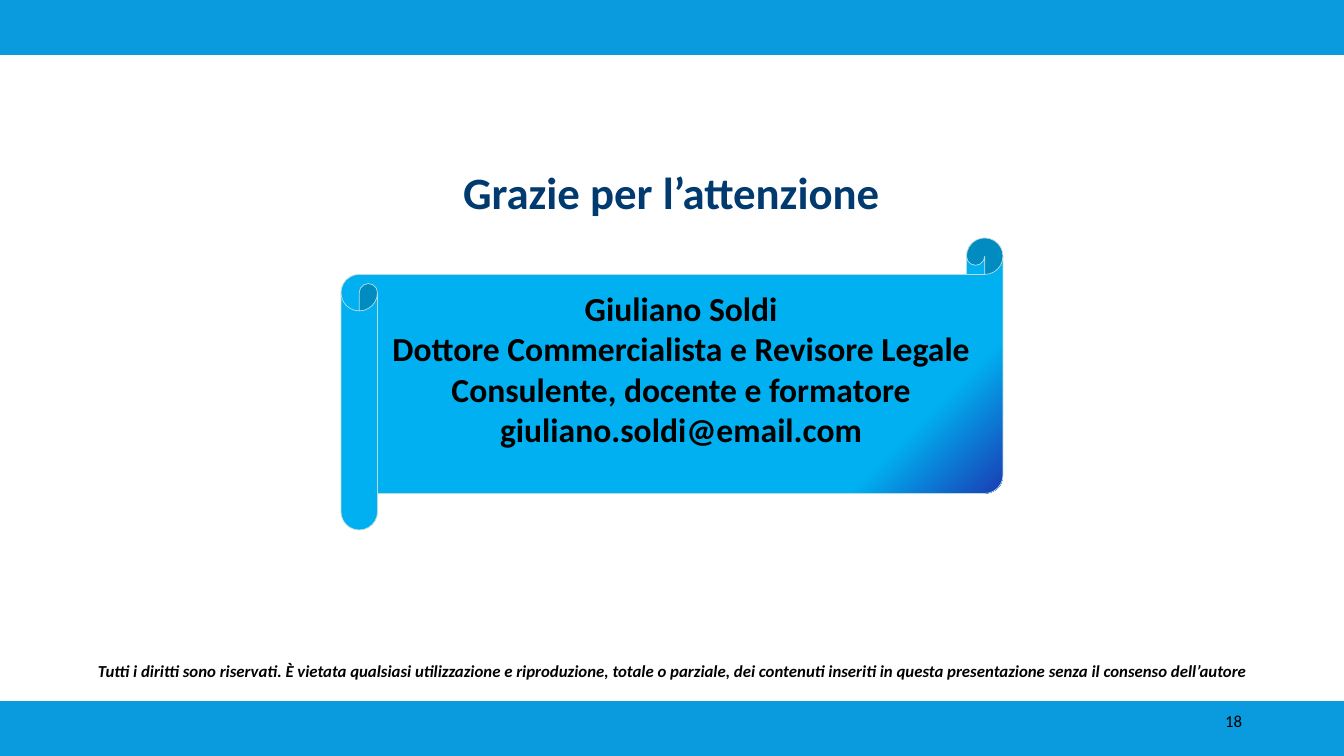
"""Build the closing slide: thanks, a scroll with the speaker's details, and a rights notice."""
import copy
from dataclasses import dataclass

import pptx
import pptx.dml.color
import pptx.enum.shapes
import pptx.enum.text
import pptx.oxml.ns
import pptx.util

EMU_PER_PX = 914400 / 100.8
PAGE_WIDTH, PAGE_HEIGHT = 1344, 756
BAND_HEIGHT = 54
FONT = "Calibri"
BAND_BLUE, SCROLL_BLUE, SCROLL_CORNER, SCROLL_EDGE = "099BDD", "00B0F0", "2020A6", "B6DCDF"
NAVY, BLACK = "003A6F", "000000"
ALIGN = pptx.enum.text.PP_ALIGN
ANCHOR = pptx.enum.text.MSO_ANCHOR
SHAPE = pptx.enum.shapes.MSO_SHAPE


@dataclass(frozen=True)
class Area:
    left: int
    top: int
    width: int
    height: int


@dataclass(frozen=True)
class Label:
    text: str
    area: Area
    size: int
    color: str = BLACK
    bold: bool = True
    italic: bool = False
    align: ALIGN = ALIGN.CENTER
    anchor: ANCHOR = ANCHOR.TOP


BANDS = [Area(0, top, PAGE_WIDTH, BAND_HEIGHT) for top in (0, PAGE_HEIGHT - BAND_HEIGHT)]
SCROLL = Area(341, 238, 662, 292)
CONTACT = "\n".join([
    "Giuliano Soldi",
    "Dottore Commercialista e Revisore Legale",
    "Consulente, docente e formatore",
    "giuliano.soldi@email.com",
])
LABELS = [
    Label("Grazie per l’attenzione", Area(180, 160, 983, 65), 32, color=NAVY),
    Label("Tutti i diritti sono riservati. È vietata qualsiasi utilizzazione e riproduzione, "
          "totale o parziale, dei contenuti inseriti in questa presentazione senza il consenso "
          "dell’autore", Area(72, 656, 1202, 30), 12, italic=True),
    Label("18", Area(950, 701, 302, 40), 12, bold=False, align=ALIGN.RIGHT, anchor=ANCHOR.MIDDLE),
]


def px(length: int) -> pptx.util.Emu:
    """Turn slide pixels into EMU."""
    return pptx.util.Emu(round(length * EMU_PER_PX))


def place(area: Area) -> tuple:
    """Give the left, top, width and height of an area in EMU."""
    return px(area.left), px(area.top), px(area.width), px(area.height)


def rgb(color: str) -> pptx.dml.color.RGBColor:
    """Turn a hex string into a colour."""
    return pptx.dml.color.RGBColor.from_string(color)


def write(frame, text: str, *, size: int, color: str = BLACK, bold: bool = True,
          italic: bool = False, align=ALIGN.CENTER, anchor=ANCHOR.TOP) -> None:
    """Fill a text frame with one paragraph for each line of text."""
    frame.word_wrap = True
    frame.vertical_anchor = anchor
    for index, line in enumerate(text.split("\n")):
        para = frame.paragraphs[0] if index == 0 else frame.add_paragraph()
        para.alignment = align
        span = para.add_run()
        span.text = line
        span.font.name, span.font.size = FONT, pptx.util.Pt(size)
        span.font.bold, span.font.italic = bold, italic
        span.font.color.rgb = rgb(color)


def add_outlined(page, kind, area: Area, line: str, weight: float):
    """Add a preset shape without shadow and with a coloured outline."""
    shape = page.shapes.add_shape(kind, *place(area))
    shape.shadow.inherit = False
    shape.line.color.rgb = rgb(line)
    shape.line.width = pptx.util.Pt(weight)
    return shape


def add_band(page, area: Area) -> None:
    """Add a solid band across the page."""
    band = add_outlined(page, SHAPE.RECTANGLE, area, BAND_BLUE, 1)
    band.fill.solid()
    band.fill.fore_color.rgb = rgb(BAND_BLUE)


def add_scroll(page) -> None:
    """Add the scroll with its corner gradient and the contact lines."""
    scroll = add_outlined(page, SHAPE.HORIZONTAL_SCROLL, SCROLL, SCROLL_EDGE, 0.5)
    scroll.fill.gradient()
    scroll.fill.gradient_angle = 315
    start, end = scroll.fill.gradient_stops
    start.color.rgb, end.color.rgb = rgb(SCROLL_BLUE), rgb(SCROLL_CORNER)
    stops = scroll.element.spPr.find(".//" + pptx.oxml.ns.qn("a:gsLst"))
    middle = copy.deepcopy(stops[0])
    middle.set("pos", "80000")
    stops.insert(1, middle)
    scroll.text_frame.margin_bottom = px(36)
    write(scroll.text_frame, CONTACT, size=24, anchor=ANCHOR.MIDDLE)


def add_label(page, label: Label) -> None:
    """Add a text box for a label."""
    box = page.shapes.add_textbox(*place(label.area))
    write(box.text_frame, label.text, size=label.size, color=label.color, bold=label.bold,
          italic=label.italic, align=label.align, anchor=label.anchor)


def main() -> None:
    """Build and save the deck."""
    deck = pptx.Presentation()
    deck.slide_width, deck.slide_height = px(PAGE_WIDTH), px(PAGE_HEIGHT)
    page = deck.slides.add_slide(deck.slide_layouts[6])
    add_scroll(page)
    for band in BANDS:
        add_band(page, band)
    for label in LABELS:
        add_label(page, label)
    deck.save("out.pptx")


if __name__ == "__main__":
    main()
